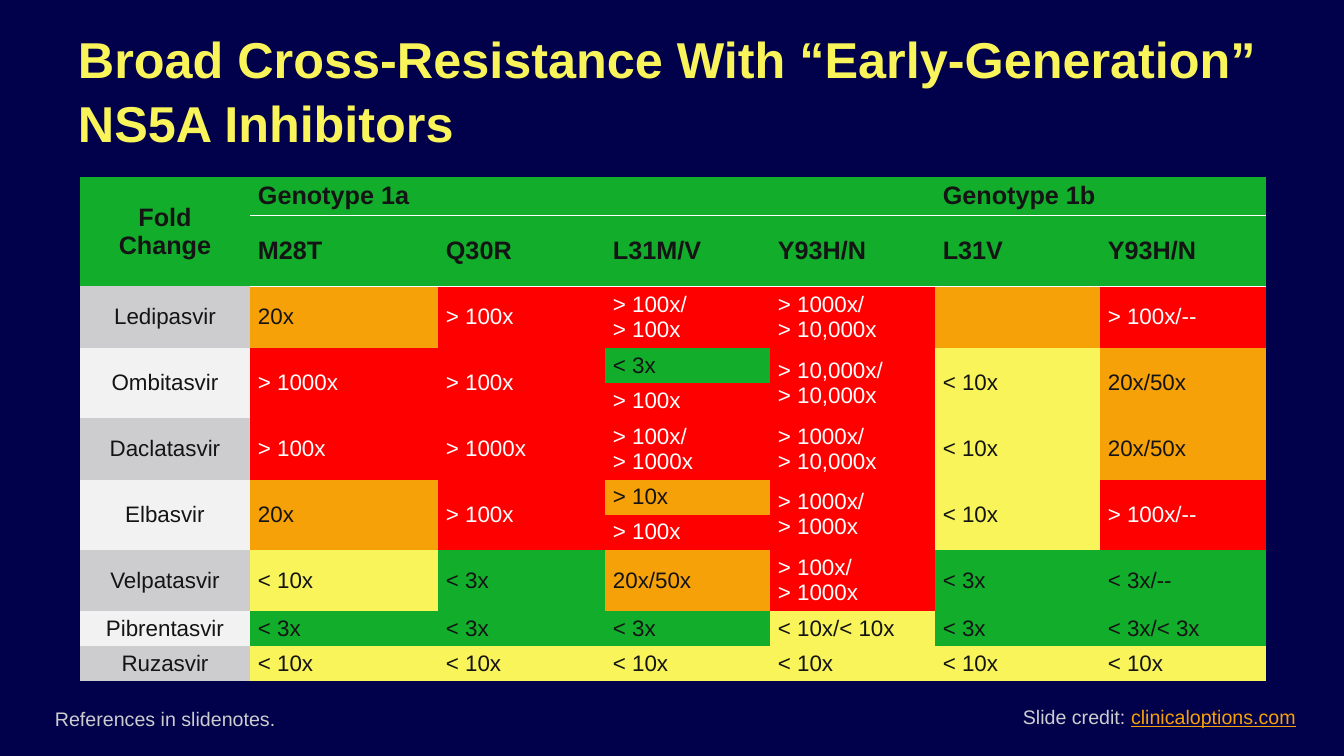
from dataclasses import dataclass
from itertools import product

from lxml import etree
from pptx import Presentation
from pptx import util as u
from pptx.dml.color import RGBColor
from pptx.enum import text
from pptx.oxml.ns import qn
from pptx.slide import Slide
from pptx.table import Table, _Cell
from pptx.text.text import _Paragraph

NAVY = RGBColor(0x00, 0x00, 0x4B)
YELLOW = RGBColor(0xF8, 0xF4, 0x5A)
GREEN = RGBColor(0x12, 0xAD, 0x2B)
ORANGE = RGBColor(0xF6, 0xA1, 0x08)
RED = RGBColor(0xFF, 0x00, 0x00)
SILVER = RGBColor(0xCD, 0xCD, 0xCF)
PALE = RGBColor(0xF2, 0xF2, 0xF2)
INK = RGBColor(0x14, 0x14, 0x15)
WHITE = RGBColor(0xFF, 0xFF, 0xFF)

FONT = "Arial"
NO_GRID_STYLE = "{2D5ABB26-0587-4C30-8999-92F81FD0307C}"
COLUMNS = (170, 188, 167, 165, 165, 165, 166)
HEADER_ROWS = (37, 71)
MUTATIONS = ("M28T", "Q30R", "L31M/V", "Y93H/N", "L31V", "Y93H/N")


@dataclass(frozen=True)
class Run:
    content: str
    size: int
    color: RGBColor
    bold: bool = False
    underline: bool = False


@dataclass(frozen=True)
class TextBox:
    left: int
    top: int
    width: int
    height: int
    runs: tuple[Run, ...]
    anchor: text.MSO_ANCHOR
    wrap: bool = True
    spacing: float = 1.0


@dataclass(frozen=True)
class Fold:
    value: str
    fill: RGBColor


@dataclass(frozen=True)
class Drug:
    name: str
    heights: tuple[int, ...]
    folds: tuple[tuple[Fold, ...], ...]


@dataclass(frozen=True)
class Block:
    row: int
    col: int
    lines: str
    fill: RGBColor
    rows: int = 1
    cols: int = 1
    size: int = 16
    bold: bool = False
    margin: int = 8
    rule: str = ""


def one(value: str, fill: RGBColor) -> tuple[Fold, ...]:
    return (Fold(value, fill),)


LOW = one("< 3x", GREEN)
MILD = one("< 10x", YELLOW)
TWENTY = one("20x", ORANGE)
MIDDLE = one("20x/50x", ORANGE)
HIGH = one("> 100x", RED)
HIGHER = one("> 1000x", RED)
HIGH_ONLY = one("> 100x/--", RED)
STEEP = one("> 1000x/\n> 10,000x", RED)
MIXED = one("> 100x/\n> 1000x", RED)

DRUGS = (
    Drug("Ledipasvir", (62,), (TWENTY, HIGH, one("> 100x/\n> 100x", RED), STEEP,
                               one("", ORANGE), HIGH_ONLY)),
    Drug("Ombitasvir", (34, 35), (HIGHER, HIGH, LOW + HIGH,
                                  one("> 10,000x/\n> 10,000x", RED), MILD, MIDDLE)),
    Drug("Daclatasvir", (61,), (HIGH, HIGHER, MIXED, STEEP, MILD, MIDDLE)),
    Drug("Elbasvir", (34, 35), (TWENTY, HIGH, one("> 10x", ORANGE) + HIGH,
                                one("> 1000x/\n> 1000x", RED), MILD, HIGH_ONLY)),
    Drug("Velpatasvir", (61,), (MILD, LOW, MIDDLE, MIXED, LOW, one("< 3x/--", GREEN))),
    Drug("Pibrentasvir", (35,), (LOW, LOW, LOW, one("< 10x/< 10x", YELLOW), LOW,
                                 one("< 3x/< 3x", GREEN))),
    Drug("Ruzasvir", (34,), (MILD,) * 6),
)

TEXT_BOXES = (
    TextBox(68, 28, 1228, 122,
            (Run("Broad Cross-Resistance With “Early-Generation” NS5A Inhibitors",
                 36, YELLOW, bold=True),), text.MSO_ANCHOR.MIDDLE, spacing=1.05),
    TextBox(1013, 700, 294, 34,
            (Run("Slide credit: ", 14, SILVER),
             Run("clinicaloptions.com", 14, ORANGE, underline=True)),
            text.MSO_ANCHOR.TOP, wrap=False),
    TextBox(45, 701, 883, 34, (Run("References in slidenotes.", 14, SILVER),),
            text.MSO_ANCHOR.BOTTOM),
)


def px(n: int) -> u.Emu:
    return u.Emu(round(n * 914400 / 100.8))


def add_run(p: _Paragraph, run: Run) -> None:
    r = p.add_run()
    r.text = run.content
    r.font.name, r.font.size = FONT, u.Pt(run.size)
    r.font.bold, r.font.underline = run.bold, run.underline
    r.font.color.rgb = run.color


def add_text_box(s: Slide, box: TextBox) -> None:
    tf = s.shapes.add_textbox(*map(px, (box.left, box.top, box.width, box.height))).text_frame
    tf.word_wrap, tf.vertical_anchor = box.wrap, box.anchor
    p = tf.paragraphs[0]
    p.line_spacing = box.spacing
    for run in box.runs:
        add_run(p, run)


def add_rule(cell: _Cell, side: str) -> None:
    ln = etree.Element(qn(f"a:{side}"), w=str(u.Pt(1)))
    fill = etree.SubElement(ln, qn("a:solidFill"))
    etree.SubElement(fill, qn("a:srgbClr"), val=str(WHITE))
    cell._tc.get_or_add_tcPr().insert(0, ln)


def fill_block(table: Table, block: Block) -> None:
    cells = [table.cell(block.row + i, block.col + j)
             for i, j in product(range(block.rows), range(block.cols))]
    for cell in cells:
        if block.rule:
            add_rule(cell, block.rule)
        cell.fill.solid()
        cell.fill.fore_color.rgb = block.fill
        cell.margin_left = cell.margin_right = px(block.margin)
        cell.margin_top = cell.margin_bottom = px(4)
        cell.vertical_anchor = text.MSO_ANCHOR.MIDDLE
        if cell is not cells[0] or not block.lines:
            etree.SubElement(cell.text_frame.paragraphs[0]._p, qn("a:endParaRPr"), sz="1600")
    if len(cells) > 1:
        cells[0].merge(cells[-1])
    tf = cells[0].text_frame
    color = WHITE if block.fill == RED else INK
    for i, line in enumerate(block.lines.splitlines()):
        p = tf.add_paragraph() if i else tf.paragraphs[0]
        p.alignment = text.PP_ALIGN.LEFT if block.col else text.PP_ALIGN.CENTER
        add_run(p, Run(line, block.size, color, block.bold))


def header_blocks() -> list[Block]:
    blocks = [
        Block(0, 0, "Fold Change", GREEN, rows=2, size=18, bold=True, margin=13),
        Block(0, 1, "Genotype 1a", GREEN, cols=4, size=18, bold=True, rule="lnB"),
        Block(0, 5, "Genotype 1b", GREEN, cols=2, size=18, bold=True, rule="lnB"),
    ]
    return blocks + [Block(1, col, name, GREEN, size=18, bold=True, rule="lnT")
                     for col, name in enumerate(MUTATIONS, 1)]


def drug_blocks() -> list[Block]:
    blocks, row = [], len(HEADER_ROWS)
    for n, drug in enumerate(DRUGS):
        span = len(drug.heights)
        blocks.append(Block(row, 0, drug.name, PALE if n % 2 else SILVER, rows=span))
        for col, folds in enumerate(drug.folds, 1):
            blocks += [Block(row + i, col, fold.value, fold.fill, rows=span // len(folds))
                       for i, fold in enumerate(folds)]
        row += span
    return blocks


def add_resistance_table(s: Slide) -> None:
    heights = HEADER_ROWS + tuple(h for drug in DRUGS for h in drug.heights)
    table = s.shapes.add_table(len(heights), len(COLUMNS), px(80), px(177),
                               px(sum(COLUMNS)), px(sum(heights))).table
    table.first_row = table.horz_banding = False
    table._tbl.tblPr.find(qn("a:tableStyleId")).text = NO_GRID_STYLE
    for column, width in zip(table.columns, COLUMNS):
        column.width = px(width)
    for row, height in zip(table.rows, heights):
        row.height = px(height)
    for block in header_blocks() + drug_blocks():
        fill_block(table, block)


def main() -> None:
    """Build the NS5A cross-resistance slide."""
    prs = Presentation()
    prs.slide_width, prs.slide_height = px(1344), px(756)
    s = prs.slides.add_slide(prs.slide_layouts[6])
    s.background.fill.solid()
    s.background.fill.fore_color.rgb = NAVY
    for box in TEXT_BOXES:
        add_text_box(s, box)
    add_resistance_table(s)
    prs.save("out.pptx")


if __name__ == "__main__":
    main()
